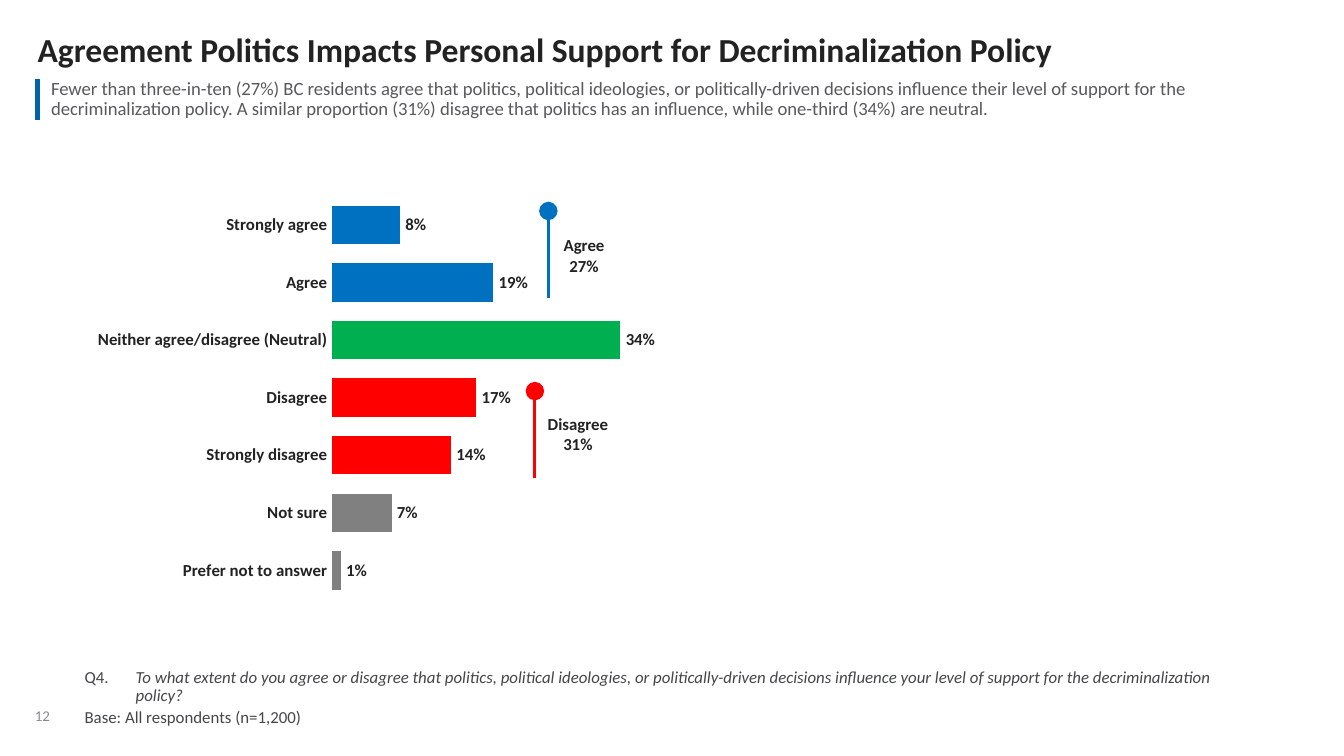
from lxml import etree
from pptx import Presentation
from pptx import util as u
from pptx.chart.data import CategoryChartData
from pptx.dml.color import RGBColor
from pptx.enum import chart as c, shapes, text
from pptx.oxml import ns

# Theme
THEME = {
    "font": "Calibri",
    "ink": "222223", "lead": "58595B", "note": "444647", "number": "888B8D",
    "accent": "0161AB", "agree": "0070C0", "neutral": "00B050",
    "disagree": "FF0000", "unsure": "808080",
    "title_size": 18, "lead_size": 10, "body_size": 9, "number_size": 8,
}

# Content
TITLE = "Agreement Politics Impacts Personal Support for Decriminalization Policy"
LEAD = ("Fewer than three-in-ten (27%) BC residents agree that politics, political ideologies, "
        "or politically-driven decisions influence their level of support for the "
        "decriminalization policy. A similar proportion (31%) disagree that politics has an "
        "influence, while one-third (34%) are neutral.")
QUESTION = ("To what extent do you agree or disagree that politics, political ideologies, or "
            "politically-driven decisions influence your level of support for the "
            "decriminalization policy?")
BASE = "Base: All respondents (n=1,200)"
PAGE_NUMBER = "12"
ANSWERS = [  # label, share, colour
    ("Strongly agree", 0.08, "agree"),
    ("Agree", 0.19, "agree"),
    ("Neither agree/disagree (Neutral)", 0.34, "neutral"),
    ("Disagree", 0.17, "disagree"),
    ("Strongly disagree", 0.14, "disagree"),
    ("Not sure", 0.07, "unsure"),
    ("Prefer not to answer", 0.01, "unsure"),
]
GROUPS = [  # label, total, colour, line (x, top), text (left, top, width)
    ("Agree", "27%", "agree", (4.08, 1.57), (4.17, 1.73, 0.35)),
    ("Disagree", "31%", "disagree", (3.98, 2.91), (4.05, 3.06, 0.5)),
]
GROUP_LINE_HEIGHT, GROUP_TEXT_HEIGHT = 0.65, 0.34
SLIDE_WIDTH = 10
SLIDE_HEIGHT = SLIDE_WIDTH * 9 / 16


def color(name):
    return RGBColor.from_string(THEME[name])


def style_font(font, size, ink, bold=False, italic=False):
    font.name, font.size = THEME["font"], u.Pt(THEME[size])
    font.color.rgb = color(ink)
    font.bold, font.italic = bold, italic


def add_run(paragraph, words, size, ink, **style):
    run = paragraph.add_run()
    run.text = words
    style_font(run.font, size, ink, **style)


def add_box(slide, left, top, width, height, inset=0, wrap=True, anchor=text.MSO_ANCHOR.TOP):
    box = slide.shapes.add_textbox(*map(u.Inches, (left, top, width, height)))
    frame = box.text_frame
    frame.word_wrap, frame.vertical_anchor = wrap, anchor
    frame.margin_left = frame.margin_right = u.Inches(inset)
    frame.margin_top = frame.margin_bottom = u.Inches(inset)
    return frame


def add_element(parent, tag, **attributes):
    return etree.SubElement(parent, ns.qn(tag), attributes)


def add_lead(slide):
    """One-cell table with an accent bar on its left edge."""
    table = slide.shapes.add_table(1, 1, *map(u.Inches, (0.28, 0.59, 9, 0.3))).table
    table.first_row = table.horz_banding = False
    cell = table.cell(0, 0)
    cell.margin_left = cell.margin_right = u.Inches(0.1)
    cell.margin_top = cell.margin_bottom = 0
    cell.vertical_anchor = text.MSO_ANCHOR.MIDDLE
    properties = cell._tc.get_or_add_tcPr()
    for side, ink, points in (("a:lnL", THEME["accent"], 3), ("a:lnR", "FFFFFF", 1)):
        border = add_element(properties, side, w=str(u.Pt(points)))
        add_element(add_element(border, "a:solidFill"), "a:srgbClr", val=ink)
    for side in ("a:lnT", "a:lnB"):
        add_element(add_element(properties, side, w="0"), "a:noFill")
    cell.fill.background()
    paragraph = cell.text_frame.paragraphs[0]
    paragraph.line_spacing, paragraph.space_after = 0.9, u.Pt(3)
    add_run(paragraph, LEAD, "lead_size", "lead")


def add_answer_chart(slide):
    data = CategoryChartData(number_format="0%")
    data.categories = [label for label, _, _ in ANSWERS]
    data.add_series("Series 1", [share for _, share, _ in ANSWERS])
    chart = slide.shapes.add_chart(
        c.XL_CHART_TYPE.BAR_CLUSTERED, *map(u.Inches, (0.28, 1.46, 8.5, 3)), data).chart
    chart.has_legend = chart.has_title = False
    style_font(chart.font, "body_size", "ink", bold=True)

    categories, values = chart.category_axis, chart.value_axis
    categories.reverse_order = True
    categories.major_tick_mark = c.XL_TICK_MARK.NONE
    categories.format.line.fill.background()
    values.minimum_scale, values.maximum_scale, values.major_unit = 0, 1, 0.2
    values.has_major_gridlines = values.visible = False

    plot = chart.plots[0]
    plot.gap_width, plot.vary_by_categories = 50, False
    plot.has_data_labels = True
    labels = plot.data_labels
    labels.show_value = True
    labels.number_format, labels.number_format_is_linked = "0%", False
    labels.position = c.XL_LABEL_POSITION.OUTSIDE_END
    style_font(labels.font, "body_size", "ink", bold=True)
    series = plot.series[0]
    series.format.fill.solid()
    series.format.fill.fore_color.rgb = color("agree")
    for index, (_, _, ink) in enumerate(ANSWERS):
        fill = series.points[index].format.fill
        fill.solid()
        fill.fore_color.rgb = color(ink)

    # Fixed plot area, leaving the left quarter to the category labels
    area = chart._chartSpace.chart.plotArea
    for old in area.findall(ns.qn("c:layout")):
        area.remove(old)
    layout = etree.Element(ns.qn("c:layout"))
    area.insert(0, layout)
    manual = add_element(layout, "c:manualLayout")
    for tag, value in (("layoutTarget", "inner"), ("xMode", "edge"), ("yMode", "edge"),
                       ("x", "0.258"), ("y", "0"), ("w", "0.742"), ("h", "1")):
        add_element(manual, f"c:{tag}", val=value)


def add_group(slide, label, total, ink, line_start, text_place):
    x, top = line_start
    line = slide.shapes.add_connector(
        shapes.MSO_CONNECTOR.STRAIGHT,
        *map(u.Inches, (x, top, x, top + GROUP_LINE_HEIGHT)))
    line.line.color.rgb, line.line.width = color(ink), u.Pt(1.5)
    add_element(line.line._get_or_add_ln(), "a:headEnd", type="oval", w="lg", len="lg")
    add_element(line._element.spPr, "a:effectLst")
    frame = add_box(slide, *text_place, GROUP_TEXT_HEIGHT, inset=0.02, wrap=False)
    for index, words in enumerate((label, total)):
        paragraph = frame.add_paragraph() if index else frame.paragraphs[0]
        paragraph.alignment = text.PP_ALIGN.CENTER
        add_run(paragraph, words, "body_size", "ink", bold=True)


def add_footnote(slide):
    frame = add_box(slide, 0.63, 5.1, 8.4, 0.31, anchor=text.MSO_ANCHOR.BOTTOM)
    question, base = frame.paragraphs[0], frame.add_paragraph()
    for paragraph in (question, base):
        properties = paragraph._p.get_or_add_pPr()
        properties.set("marL", str(u.Inches(0.38)))
        properties.set("indent", str(u.Inches(-0.38)))
        paragraph.line_spacing, paragraph.space_after = 0.9, u.Pt(2)
    add_run(question, "Q4.\t", "body_size", "note")
    add_run(question, QUESTION, "body_size", "note", italic=True)
    add_run(base, BASE, "body_size", "note")


def main():
    presentation = Presentation()
    presentation.slide_width = u.Inches(SLIDE_WIDTH)
    presentation.slide_height = u.Inches(SLIDE_HEIGHT)
    slide = presentation.slides.add_slide(presentation.slide_layouts[6])

    # Page number and title
    number = add_box(slide, 0.26, 5.13, 0.34, 0.26, wrap=False,
                     anchor=text.MSO_ANCHOR.BOTTOM).paragraphs[0]
    number.line_spacing = 0.85
    add_run(number, PAGE_NUMBER, "number_size", "number")
    title = add_box(slide, 0.28, 0.25, 9.46, 0.27).paragraphs[0]
    title.line_spacing = 0.9
    add_run(title, TITLE, "title_size", "ink", bold=True)

    # Footnote, lead, chart and group totals
    add_footnote(slide)
    add_lead(slide)
    add_answer_chart(slide)
    for group in GROUPS:
        add_group(slide, *group)
    presentation.save("out.pptx")


if __name__ == "__main__":
    main()
